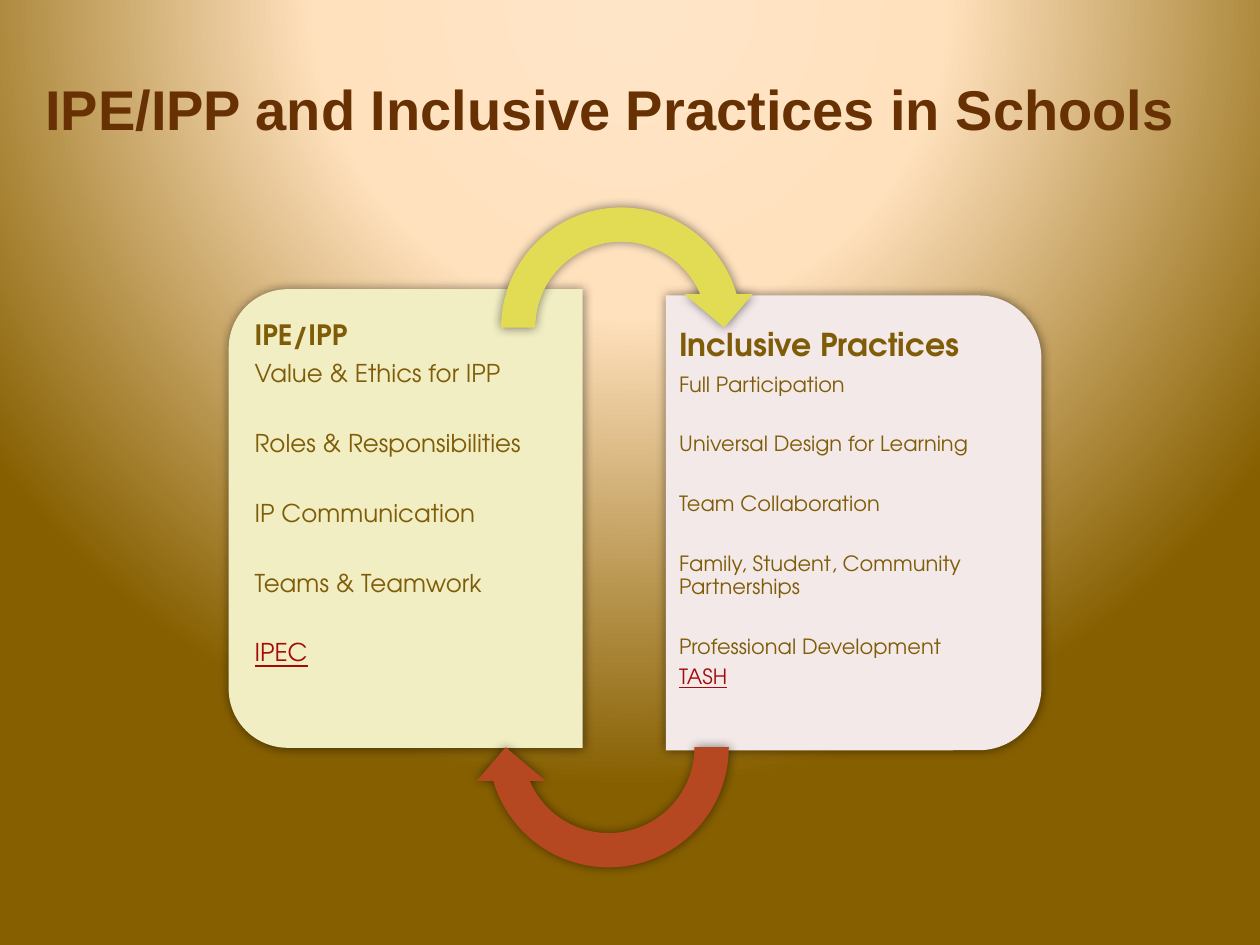
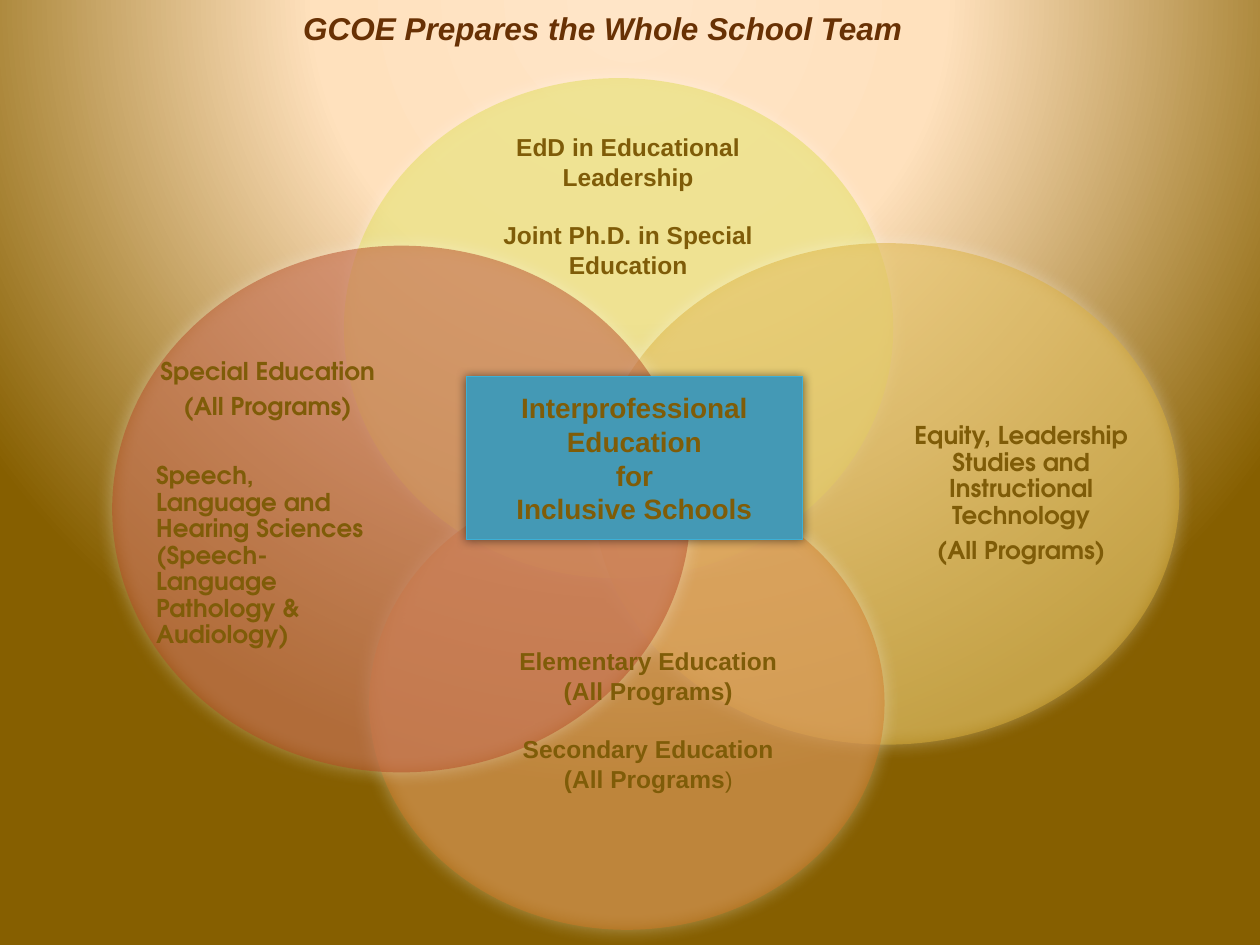
from dataclasses import dataclass

from pptx import Presentation
from pptx.dml.color import RGBColor
from pptx.enum.shapes import MSO_SHAPE as Preset
from pptx.enum.text import MSO_ANCHOR as Anchor, MSO_AUTO_SIZE as AutoSize, PP_ALIGN as Align
from pptx.oxml import parse_xml
from pptx.oxml.ns import nsdecls, qn
from pptx.util import Inches, Pt

COLORS = {
    "title": "683104", "text": "7F5C08", "link": "A40A06",
    "cream": "F1EEC3", "blush": "F3E9E8", "lime": "E1DC53",
    "rust": "B54721", "gold": "DCB039", "orange": "D07925",
    "teal": "4499B5", "teal_edge": "3DB0D6",
    "black": "000000", "white": "FFFFFF",
}
BACKGROUND_STOPS = [(0, "FFE5C7"), (40, "FFE1BD"), (100, "865F00")]
SANS = "Arial"
ROUND = "TeX Gyre Adventor"
ROUND_SPACING = {"line_spacing": 0.9, "after": 0.35, "gap": 1.42}
SANS_SPACING = {"line_spacing": 1.0, "after": 0, "gap": 1.19}


@dataclass
class Line:
    text: str
    size: int
    gap: bool = False
    bold: bool = True
    italic: bool = False
    link: bool = False
    align: Align = Align.CENTER
    color: str = "text"


class Slides:
    def __init__(self):
        self.deck = Presentation()
        self.deck.slide_width, self.deck.slide_height = Inches(10), Inches(7.5)
        self.page = None
        self.paint_background()

    def paint_background(self):
        master = self.deck.slide_master
        master.background.fill.solid()
        holder = master.element.find(".//" + qn("p:bgPr"))
        stops = "".join(
            f'<a:gs pos="{position * 1000}"><a:srgbClr val="{color}"/></a:gs>'
            for position, color in BACKGROUND_STOPS
        )
        gradient = parse_xml(
            f'<a:gradFill {nsdecls("a")} rotWithShape="1"><a:gsLst>{stops}</a:gsLst>'
            '<a:path path="circle"><a:fillToRect l="50000" t="-80000" r="50000" b="180000"/>'
            "</a:path></a:gradFill>"
        )
        holder.replace(holder.find(qn("a:solidFill")), gradient)

    def color(self, name):
        return RGBColor.from_string(COLORS[name])

    def new_page(self):
        self.page = self.deck.slides.add_slide(self.deck.slide_layouts[5])

    def fill_text(self, frame, lines, font, line_spacing, after, gap):
        frame.word_wrap = True
        for index, line in enumerate(lines):
            para = frame.paragraphs[0] if index == 0 else frame.add_paragraph()
            para.text = line.text
            para.alignment = line.align
            para.line_spacing = line_spacing
            para.space_before = Pt(line.size * gap if line.gap else 0)
            para.space_after = Pt(line.size * after)
            para.font.name = font
            para.font.size = Pt(line.size)
            para.font.bold = line.bold
            para.font.italic = line.italic
            para.font.underline = line.link
            para.font.color.rgb = self.color("link" if line.link else line.color)

    def place(self, shape, bounds):
        shape.left, shape.top, shape.width, shape.height = map(Inches, bounds)

    def title(self, text, size, bounds, anchor, line_spacing=1.0, italic=False):
        title = self.page.shapes.title
        self.place(title, bounds)
        frame = title.text_frame
        frame.auto_size = AutoSize.NONE
        frame.vertical_anchor = anchor
        line = Line(text, size, italic=italic, color="title")
        self.fill_text(frame, [line], SANS, line_spacing, 0, 0)

    def text(self, bounds, lines, font, spacing, insets=(0.1, 0.05, 0.1, 0.05), anchor=Anchor.TOP):
        box = self.page.shapes.add_textbox(*map(Inches, bounds))
        frame = box.text_frame
        frame.margin_left, frame.margin_top, frame.margin_right, frame.margin_bottom = map(Inches, insets)
        frame.vertical_anchor = anchor
        self.fill_text(frame, lines, font, **spacing)
        return box

    def shape(self, preset, bounds, fill, rotation=0, adjustments=(), edge=None,
              opacity=100, glow=("black", 50, 6)):
        shape = self.page.shapes.add_shape(preset, *map(Inches, bounds))
        shape.rotation = rotation
        for index, value in enumerate(adjustments):
            shape.adjustments[index] = value
        shape.fill.solid()
        shape.fill.fore_color.rgb = self.color(fill)
        if opacity < 100:
            tint = shape.element.spPr.find(qn("a:solidFill")).find(qn("a:srgbClr"))
            tint.append(parse_xml(f'<a:alpha {nsdecls("a")} val="{opacity * 1000}"/>'))
        if edge:
            shape.line.color.rgb = self.color(edge)
            shape.line.width = Pt(0.75)
        else:
            shape.line.fill.background()
        self.add_glow(shape, *glow)
        return shape

    def add_glow(self, shape, color, opacity, blur):
        shape.shadow.inherit = False
        effects = shape.element.spPr.find(qn("a:effectLst"))
        effects.append(parse_xml(
            f'<a:outerShdw {nsdecls("a")} blurRad="{Pt(blur)}" dist="0" dir="0" rotWithShape="0">'
            f'<a:srgbClr val="{COLORS[color]}"><a:alpha val="{opacity * 1000}"/></a:srgbClr>'
            "</a:outerShdw>"
        ))

    def panel(self, bounds, fill, rotation):
        self.shape(Preset.ROUND_2_SAME_RECTANGLE, bounds, fill, rotation, (0.167, 0))

    def arrow(self, left, top, fill, rotation=0):
        self.shape(Preset.CIRCULAR_ARROW, (left, top, 2.18, 2.18), fill, rotation,
                   (0.125, 11.423, 204.577, 108, 0.125))

    def circle(self, bounds, fill):
        self.shape(Preset.OVAL, bounds, fill, opacity=50, glow=("white", 65, 10))

    def topics(self, bounds, insets, heading, heading_size, size, items, link, link_gap):
        left = Align.LEFT
        lines = [Line(heading, heading_size, align=left)]
        lines += [Line(item, size, gap=index > 0, bold=False, align=left)
                  for index, item in enumerate(items)]
        lines.append(Line(link, size, gap=link_gap, bold=False, link=True, align=left))
        self.text(bounds, lines, ROUND, ROUND_SPACING, insets)


def build_practices(slides):
    slides.new_page()
    slides.title("IPE/IPP and Inclusive Practices in Schools", 32,
                 (0, 0.26, 9.69, 1.25), Anchor.MIDDLE, 0.95)
    slides.panel((1.4, 2.71, 3.64, 2.81), "cream", 270)
    slides.topics(
        (1.95, 2.44, 2.68, 3.37), (0.07, 0.11, 0.1, 0.11), "IPE/IPP", 16, 14,
        ["Value & Ethics for IPP", "Roles & Responsibilities", "IP Communication", "Teams & Teamwork"],
        "IPEC", True,
    )
    slides.panel((4.97, 2.66, 3.61, 2.98), "blush", 90)
    slides.topics(
        (5.28, 2.49, 2.84, 3.32), (0.11, 0.12, 0.07, 0.12), "Inclusive Practices", 18, 12,
        ["Full Participation", "Universal Design for Learning", "Team Collaboration",
         "Family, Student, Community Partnerships", "Professional Development"],
        "TASH", False,
    )
    slides.arrow(3.84, 1.51, "lime")
    slides.arrow(3.74, 4.84, "rust", 180)


def build_school_team(slides):
    slides.new_page()
    slides.title("GCOE Prepares the Whole School Team", 18,
                 (0.68, 0.02, 8.21, 0.4), Anchor.TOP, italic=True)
    slides.circle((2.73, 0.62, 4.36, 3.97), "lime")
    slides.circle((4.71, 1.93, 4.65, 3.98), "gold")
    no_insets = (0, 0, 0, 0)
    slides.text((7.21, 2.39, 1.79, 3.06), [
        Line("Equity, Leadership Studies and Instructional Technology", 14),
        Line("(All Programs)", 14),
    ], ROUND, ROUND_SPACING, no_insets, Anchor.MIDDLE)
    slides.circle((2.93, 3.78, 4.09, 3.6), "orange")
    slides.circle((0.89, 1.95, 4.59, 4.18), "rust")
    slides.text((1.24, 2.39, 1.77, 3.22), [
        Line("Special Education", 14),
        Line("(All Programs)", 14),
        Line("Speech, Language and Hearing Sciences (Speech-Language Pathology & Audiology)",
             14, gap=True, align=Align.LEFT),
    ], ROUND, ROUND_SPACING, no_insets, Anchor.MIDDLE)

    center = slides.shape(Preset.RECTANGLE, (3.7, 2.99, 2.67, 1.29), "teal", edge="teal_edge")
    center.text_frame.vertical_anchor = Anchor.MIDDLE
    slides.fill_text(center.text_frame, [
        Line("Interprofessional Education", 16),
        Line("for\vInclusive Schools", 16),
    ], SANS, **SANS_SPACING)

    schools = slides.text((3.85, 5.08, 2.59, 1.45), [
        Line("Elementary Education", 14),
        Line("(All Programs)", 14),
        Line("Secondary Education", 14, gap=True),
        Line("(All Programs", 14),
    ], SANS, SANS_SPACING)
    span = schools.text_frame.paragraphs[-1].add_run()
    span.text = ")"
    span.font.size = Pt(13)
    span.font.bold = False
    slides.text((3.79, 1, 2.39, 1.28), [
        Line("EdD in Educational Leadership", 14),
        Line("Joint Ph.D. in Special Education", 14, gap=True),
    ], SANS, SANS_SPACING)


def main():
    slides = Slides()
    build_practices(slides)
    build_school_team(slides)
    slides.deck.save("out.pptx")


if __name__ == "__main__":
    main()
